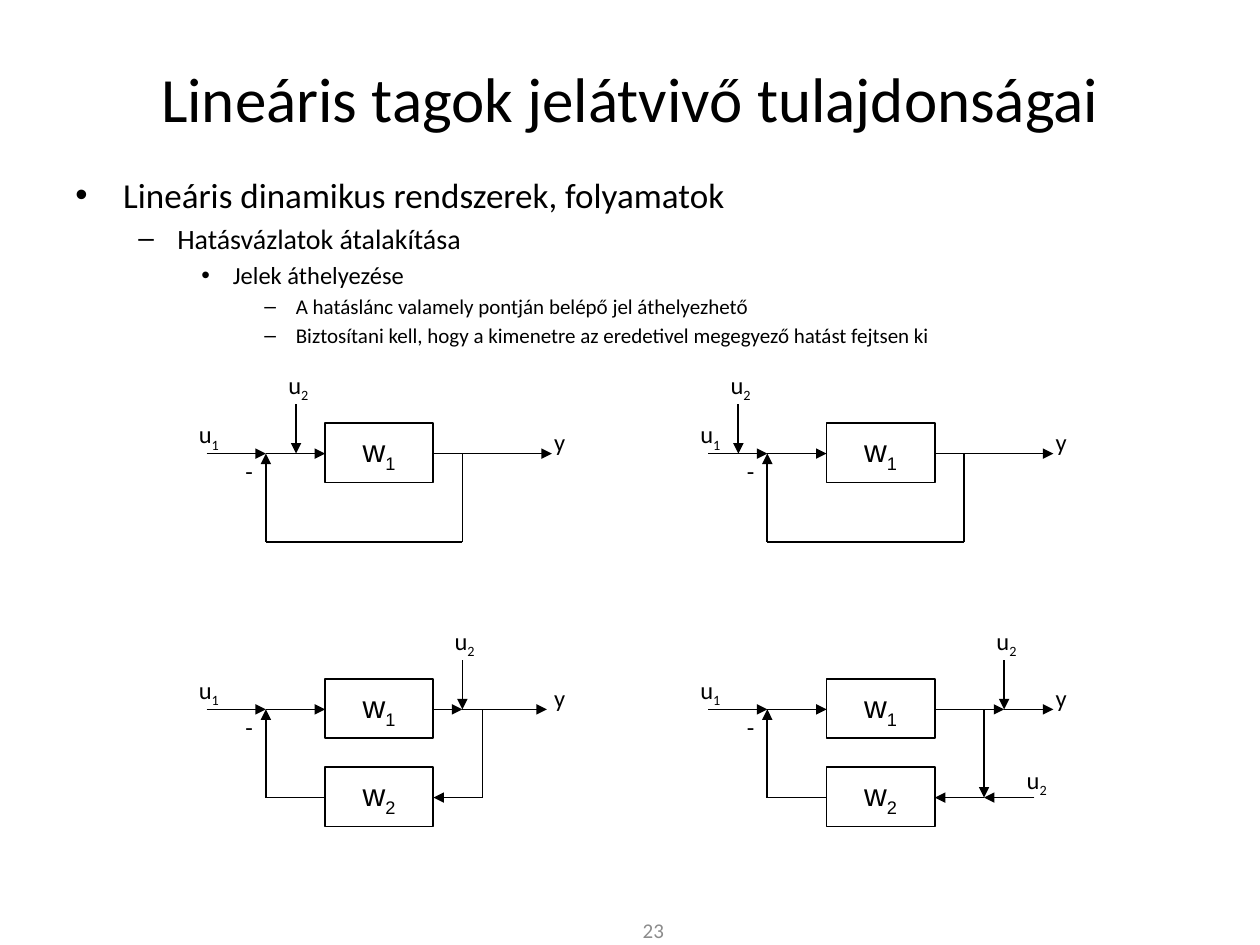
"""Build a slide of block diagrams about relocating signals in linear systems."""
from dataclasses import dataclass

from lxml.etree import SubElement
from pptx import Presentation
from pptx.dml.color import RGBColor
from pptx.enum.shapes import MSO_CONNECTOR as Connector, MSO_SHAPE as Shape
from pptx.enum.text import MSO_ANCHOR as Anchor, MSO_AUTO_SIZE as AutoSize, PP_ALIGN as Align
from pptx.oxml.ns import qn
from pptx.util import Inches, Pt

BLACK = RGBColor(0x00, 0x00, 0x00)
GREY = RGBColor(0x8C, 0x8C, 0x8C)
FEEDBACK_DROP = 0.7
SUM_X, BOX_X, BOX_END = 0.47, 0.94, 1.8
BRANCH_X, OUTPUT_END = 2.19, 2.74


@dataclass(frozen=True)
class Bullet:
    text: str
    level: int


@dataclass(frozen=True)
class BulletStyle:
    mark: str
    size: int
    margin: float
    hanging: float


@dataclass(frozen=True)
class Diagram:
    left: float
    axis: float
    input_x: float
    has_second_box: bool = False
    output_end: float = OUTPUT_END
    has_branch_input: bool = False


STYLES = [
    BulletStyle("•", 20, 0.38, 0.38),
    BulletStyle("–", 16, 0.81, 0.31),
    BulletStyle("•", 14, 1.25, 0.25),
    BulletStyle("–", 12, 1.75, 0.25),
]
BULLETS = [
    Bullet("Lineáris dinamikus rendszerek, folyamatok", 0),
    Bullet("Hatásvázlatok átalakítása", 1),
    Bullet("Jelek áthelyezése", 2),
    Bullet("A hatáslánc valamely pontján belépő jel áthelyezhető", 3),
    Bullet("Biztosítani kell, hogy a kimenetre az eredetivel megegyező hatást fejtsen ki", 3),
]
DIAGRAMS = [
    Diagram(1.64, 3.6, 0.71),
    Diagram(5.62, 3.6, 0.24),
    Diagram(1.64, 5.63, 2.03, True, 2.7),
    Diagram(5.62, 5.63, 2.35, True, has_branch_input=True),
]


def style_span(span, size: float, color: RGBColor = BLACK, font: str = "Calibri") -> None:
    span.font.size = Pt(size)
    span.font.name = font
    span.font.color.rgb = color


def write_symbol(para, symbol: str, size: float, font: str) -> None:
    for index, letter in enumerate(symbol):
        span = para.add_run()
        span.text = letter
        style_span(span, size, font=font)
        if index:
            span.font._element.set("baseline", "-25000")


def add_text(page, text: str, left: float, top: float, width: float, height: float,
             size: float, color: RGBColor = BLACK) -> None:
    frame = page.shapes.add_textbox(
        Inches(left), Inches(top), Inches(width), Inches(height)).text_frame
    frame.word_wrap = True
    frame.vertical_anchor = Anchor.MIDDLE
    frame.text = text
    frame.paragraphs[0].alignment = Align.CENTER
    style_span(frame.paragraphs[0].runs[0], size, color)


def add_bullets(page) -> None:
    frame = page.shapes.add_textbox(
        Inches(0.5), Inches(1.33), Inches(9), Inches(5.7)).text_frame
    frame.word_wrap = True
    for index, bullet in enumerate(BULLETS):
        style = STYLES[bullet.level]
        para = frame.add_paragraph() if index else frame.paragraphs[0]
        para.text = bullet.text
        para.level = bullet.level
        para.space_before = Pt(style.size * 0.2)
        style_span(para.runs[0], style.size)
        properties = para._p.get_or_add_pPr()
        properties.set("marL", str(Inches(style.margin)))
        properties.set("indent", str(-Inches(style.hanging)))
        SubElement(properties, qn("a:buFont")).set("typeface", "Arial")
        SubElement(properties, qn("a:buChar")).set("char", style.mark)


def add_label(page, diagram: Diagram, symbol: str, x: float, y: float, width: float) -> None:
    frame = page.shapes.add_textbox(
        Inches(diagram.left + x), Inches(diagram.axis + y), Inches(width), Inches(0.34)).text_frame
    frame.word_wrap = False
    frame.auto_size = AutoSize.SHAPE_TO_FIT_TEXT
    write_symbol(frame.paragraphs[0], symbol, 14, "Calibri")


def add_block(page, diagram: Diagram, symbol: str, y: float) -> None:
    box = page.shapes.add_shape(
        Shape.RECTANGLE, Inches(diagram.left + BOX_X), Inches(diagram.axis + y - 0.24),
        Inches(BOX_END - BOX_X), Inches(0.47))
    box.shadow.inherit = False
    box.fill.background()
    box.line.color.rgb = BLACK
    box.line.width = Pt(1)
    box.text_frame.vertical_anchor = Anchor.MIDDLE
    para = box.text_frame.paragraphs[0]
    para.alignment = Align.CENTER
    write_symbol(para, symbol, 18, "Arial")


def add_signal(page, diagram: Diagram, start: tuple[float, float],
               end: tuple[float, float], arrow: bool = True) -> None:
    signal = page.shapes.add_connector(
        Connector.STRAIGHT,
        Inches(diagram.left + start[0]), Inches(diagram.axis + start[1]),
        Inches(diagram.left + end[0]), Inches(diagram.axis + end[1]))
    signal.line.color.rgb = BLACK
    signal.line.width = Pt(1)
    if arrow:
        SubElement(signal.line._get_or_add_ln(), qn("a:tailEnd")).set("type", "triangle")
    SubElement(signal._element.spPr, qn("a:effectLst"))


def add_diagram(page, diagram: Diagram) -> None:
    drop = FEEDBACK_DROP
    add_block(page, diagram, "w1", 0)
    add_signal(page, diagram, (0, 0), (SUM_X, 0))
    add_signal(page, diagram, (SUM_X, 0), (BOX_X, 0))
    add_signal(page, diagram, (SUM_X, drop), (SUM_X, 0))
    add_signal(page, diagram, (diagram.input_x, -0.39), (diagram.input_x, 0))
    add_label(page, diagram, "u1", -0.16, -0.32, 0.37)
    add_label(page, diagram, "u2", diagram.input_x - 0.16, -0.71, 0.37)
    add_label(page, diagram, "-", 0.21, -0.03, 0.26)
    add_label(page, diagram, "y", 2.66, -0.26, 0.29)
    if diagram.has_second_box:
        add_block(page, diagram, "w2", drop)
        add_signal(page, diagram, (BOX_END, 0), (diagram.input_x, 0))
        add_signal(page, diagram, (diagram.input_x, 0), (diagram.output_end, 0))
        add_signal(page, diagram, (BRANCH_X, 0), (BRANCH_X, drop), diagram.has_branch_input)
        add_signal(page, diagram, (BRANCH_X, drop), (BOX_END, drop))
        add_signal(page, diagram, (BOX_X, drop), (SUM_X, drop), False)
    else:
        add_signal(page, diagram, (BOX_END, 0), (diagram.output_end, 0))
        add_signal(page, diagram, (2.03, 0), (2.03, drop), False)
        add_signal(page, diagram, (2.03, drop), (SUM_X, drop), False)
    if diagram.has_branch_input:
        add_signal(page, diagram, (2.59, drop), (BRANCH_X, drop))
        add_label(page, diagram, "u2", 2.43, 0.39, 0.37)


def main() -> None:
    deck = Presentation()
    deck.slide_width, deck.slide_height = Inches(10), Inches(7.5)
    page = deck.slides.add_slide(deck.slide_layouts[6])
    add_text(page, "Lineáris tagok jelátvivő tulajdonságai", 0.5, 0.3, 9, 0.95, 36)
    add_bullets(page)
    add_text(page, "23", 4.77, 7.26, 0.83, 0.24, 12, GREY)
    for diagram in DIAGRAMS:
        add_diagram(page, diagram)
    deck.save("out.pptx")


if __name__ == "__main__":
    main()
